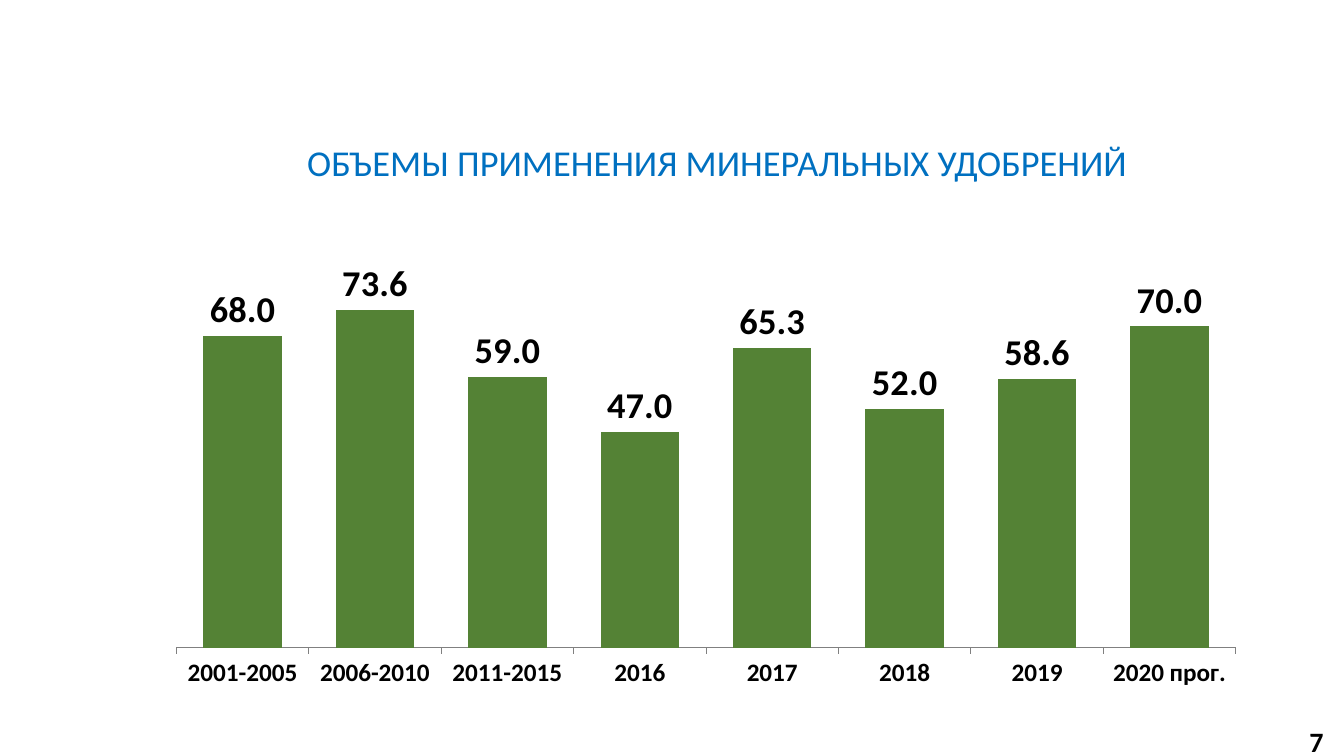
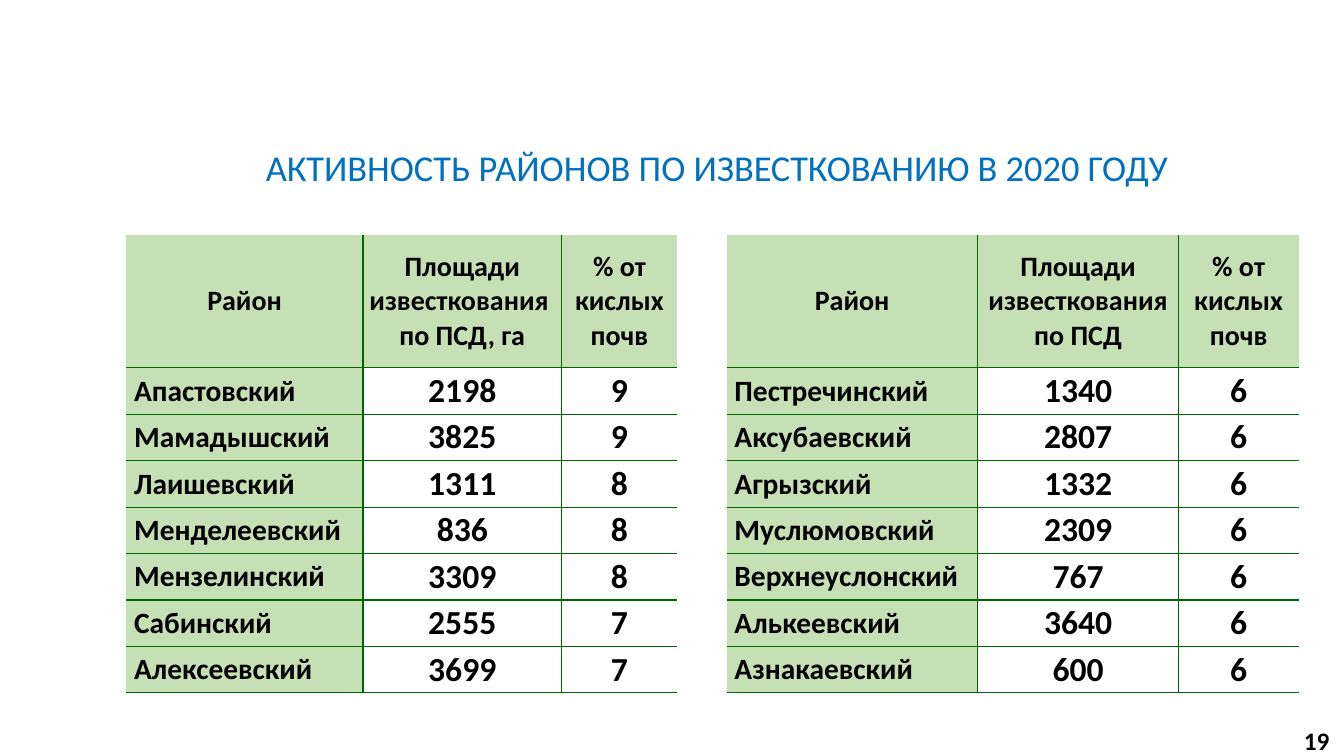
from dataclasses import dataclass

from lxml.etree import SubElement
from pptx import Presentation
from pptx.chart.data import CategoryChartData
from pptx.dml.color import RGBColor
from pptx.enum.chart import XL_CHART_TYPE, XL_LABEL_POSITION, XL_TICK_LABEL_POSITION, XL_TICK_MARK
from pptx.enum.shapes import MSO_SHAPE
from pptx.enum.text import MSO_ANCHOR, MSO_AUTO_SIZE, PP_ALIGN
from pptx.oxml import parse_xml
from pptx.oxml.ns import qn
from pptx.slide import Slide
from pptx.table import _Cell
from pptx.text.text import Font, _Paragraph
from pptx.util import Cm, Pt

FACE = "Calibri"
BLACK = "000000"
BLUE = "0070C0"
GREEN = "548235"
PALE = "C5E0B4"
EDGE = "006600"
GREY = "808080"


@dataclass(frozen=True)
class Grid:
    left: float
    widths: tuple[float, ...]
    heads: tuple[str, ...]
    rows: tuple[tuple[str, int, int], ...]


GRIDS = (
    Grid(
        3.18,
        (5.97, 5.0, 2.92),
        ("Район", "Площади известкования \nпо ПСД, га", "% от кислых почв"),
        (
            ("Апастовский", 2198, 9),
            ("Мамадышский", 3825, 9),
            ("Лаишевский", 1311, 8),
            ("Менделеевский", 836, 8),
            ("Мензелинский", 3309, 8),
            ("Сабинский", 2555, 7),
            ("Алексеевский", 3699, 7),
        ),
    ),
    Grid(
        18.31,
        (6.33, 5.06, 3.03),
        ("Район", "Площади известкования по ПСД", "% от кислых почв"),
        (
            ("Пестречинский", 1340, 6),
            ("Аксубаевский", 2807, 6),
            ("Агрызский", 1332, 6),
            ("Муслюмовский", 2309, 6),
            ("Верхнеуслонский", 767, 6),
            ("Алькеевский", 3640, 6),
            ("Азнакаевский", 600, 6),
        ),
    ),
)

DOSES = {
    "2001-2005": 68,
    "2006-2010": 73.6,
    "2011-2015": 59,
    "2016": 47,
    "2017": 65.3,
    "2018": 52,
    "2019": 58.6,
    "2020 прог.": 70,
}


def paint(code: str) -> RGBColor:
    return RGBColor.from_string(code)


def style(font: Font, size: float, tint: str = BLACK, bold: bool = True) -> None:
    font.name = FACE
    font.size = Pt(size)
    font.bold = bold
    font.color.rgb = paint(tint)


def write(para: _Paragraph, text: str, size: float, tint: str = BLACK,
          bold: bool = True, align: PP_ALIGN = PP_ALIGN.CENTER) -> None:
    para.alignment = align
    for pos, line in enumerate(text.split("\n")):
        if pos:
            para.add_line_break()
        run = para.add_run()
        run.text = line
        style(run.font, size, tint, bold)


def add_title(slide: Slide, text: str, top: float) -> None:
    box = slide.shapes.add_textbox(Cm(2.3), Cm(top), Cm(31.57), Cm(1.37))
    frame = box.text_frame
    frame.word_wrap = True
    frame.auto_size = MSO_AUTO_SIZE.SHAPE_TO_FIT_TEXT
    write(frame.paragraphs[0], text, 26, BLUE, False)


def add_page(slide: Slide, number: int, size: float) -> None:
    box = slide.shapes.add_shape(
        MSO_SHAPE.ROUNDED_RECTANGLE, Cm(32.61), Cm(18.29), Cm(1.14), Cm(0.76))
    box.adjustments[0] = 0
    box.shadow.inherit = False
    box.fill.background()
    box.line.fill.background()
    frame = box.text_frame
    frame.margin_left = frame.margin_right = 0
    frame.margin_top = frame.margin_bottom = Cm(0.13)
    frame.vertical_anchor = MSO_ANCHOR.MIDDLE
    write(frame.paragraphs[0], str(number), size)


def add_bars(slide: Slide) -> None:
    data = CategoryChartData(number_format="0.0")
    data.categories = list(DOSES)
    data.add_series("Series 1", list(DOSES.values()))
    chart = slide.shapes.add_chart(
        XL_CHART_TYPE.COLUMN_CLUSTERED, Cm(3.89), Cm(6.6), Cm(27.81), Cm(10.92), data).chart
    chart.has_legend = False
    chart.has_title = False
    style(chart.font, 10, bold=False)

    scale = chart.value_axis
    scale.minimum_scale, scale.maximum_scale = 0, 80
    scale.has_major_gridlines = False
    scale.visible = False

    axis = chart.category_axis
    axis.major_tick_mark = XL_TICK_MARK.OUTSIDE
    axis.tick_label_position = XL_TICK_LABEL_POSITION.LOW
    axis.format.line.color.rgb = paint(GREY)
    axis.format.line.width = Pt(0.75)
    style(axis.tick_labels.font, 18)

    plot = chart.plots[0]
    plot.vary_by_categories = False
    plot.gap_width, plot.overlap = 69, 13
    fill = plot.series[0].format.fill
    fill.solid()
    fill.fore_color.rgb = paint(GREEN)
    plot.has_data_labels = True
    labels = plot.data_labels
    labels.show_value = True
    labels.number_format = "0.0"
    labels.number_format_is_linked = False
    labels.position = XL_LABEL_POSITION.OUTSIDE_END
    style(labels.font, 26)

    area = chart.element.find(".//" + qn("c:plotArea"))
    for old in area.findall(qn("c:layout")):
        area.remove(old)
    area.insert(0, parse_xml(
        '<c:layout xmlns:c="http://schemas.openxmlformats.org/drawingml/2006/chart">'
        '<c:manualLayout><c:layoutTarget val="inner"/>'
        '<c:xMode val="edge"/><c:yMode val="edge"/>'
        '<c:x val="0.02"/><c:y val="0.04"/><c:w val="0.96"/><c:h val="0.85"/>'
        '</c:manualLayout></c:layout>'))


def rule(cell: _Cell, sides: dict[str, bool]) -> None:
    props = cell._tc.get_or_add_tcPr()
    for side, shown in sides.items():
        line = SubElement(props, qn(f"a:ln{side}"), w=str(Pt(1)))
        if shown:
            fill = SubElement(line, qn("a:solidFill"))
            SubElement(fill, qn("a:srgbClr"), val=EDGE)
        else:
            SubElement(line, qn("a:noFill"))


def add_grid(slide: Slide, grid: Grid) -> None:
    lines = (grid.heads, *grid.rows)
    highs = [3.35] + [1.17] * len(grid.rows)
    table = slide.shapes.add_table(
        len(lines), len(grid.widths), Cm(grid.left), Cm(5.92),
        Cm(sum(grid.widths)), Cm(sum(highs))).table
    table.first_row = False
    table.horz_banding = False
    for col, width in zip(table.columns, grid.widths):
        col.width = Cm(width)
    last = len(grid.widths) - 1
    for y, (line, high) in enumerate(zip(lines, highs)):
        table.rows[y].height = Cm(high)
        for x, value in enumerate(line):
            cell = table.cell(y, x)
            name = y > 0 and x == 0
            cell.vertical_anchor = MSO_ANCHOR.MIDDLE
            cell.margin_left = Cm(0.2 if name else 0.03)
            cell.margin_right = Cm(0.03)
            cell.margin_top = cell.margin_bottom = 0
            rule(cell, {"L": x > 0, "R": x < last, "T": y > 0, "B": True})
            if y == 0 or x == 0:
                cell.fill.solid()
                cell.fill.fore_color.rgb = paint(PALE)
            else:
                cell.fill.background()
            size = 20 if y == 0 else 21 if name else 24
            align = PP_ALIGN.LEFT if name else PP_ALIGN.CENTER
            write(cell.text_frame.paragraphs[0], str(value), size, align=align)


def main() -> None:
    deck = Presentation()
    deck.slide_width, deck.slide_height = Cm(33.87), Cm(19.05)
    blank = deck.slide_layouts[6]

    slide = deck.slides.add_slide(blank)
    add_page(slide, 7, 20)
    add_title(slide, "ОБЪЕМЫ ПРИМЕНЕНИЯ МИНЕРАЛЬНЫХ УДОБРЕНИЙ", 3.4)
    add_bars(slide)

    slide = deck.slides.add_slide(blank)
    add_title(slide, "АКТИВНОСТЬ РАЙОНОВ ПО ИЗВЕСТКОВАНИЮ В 2020 ГОДУ", 3.53)
    add_page(slide, 19, 18)
    for grid in GRIDS:
        add_grid(slide, grid)

    deck.save("out.pptx")


if __name__ == "__main__":
    main()
